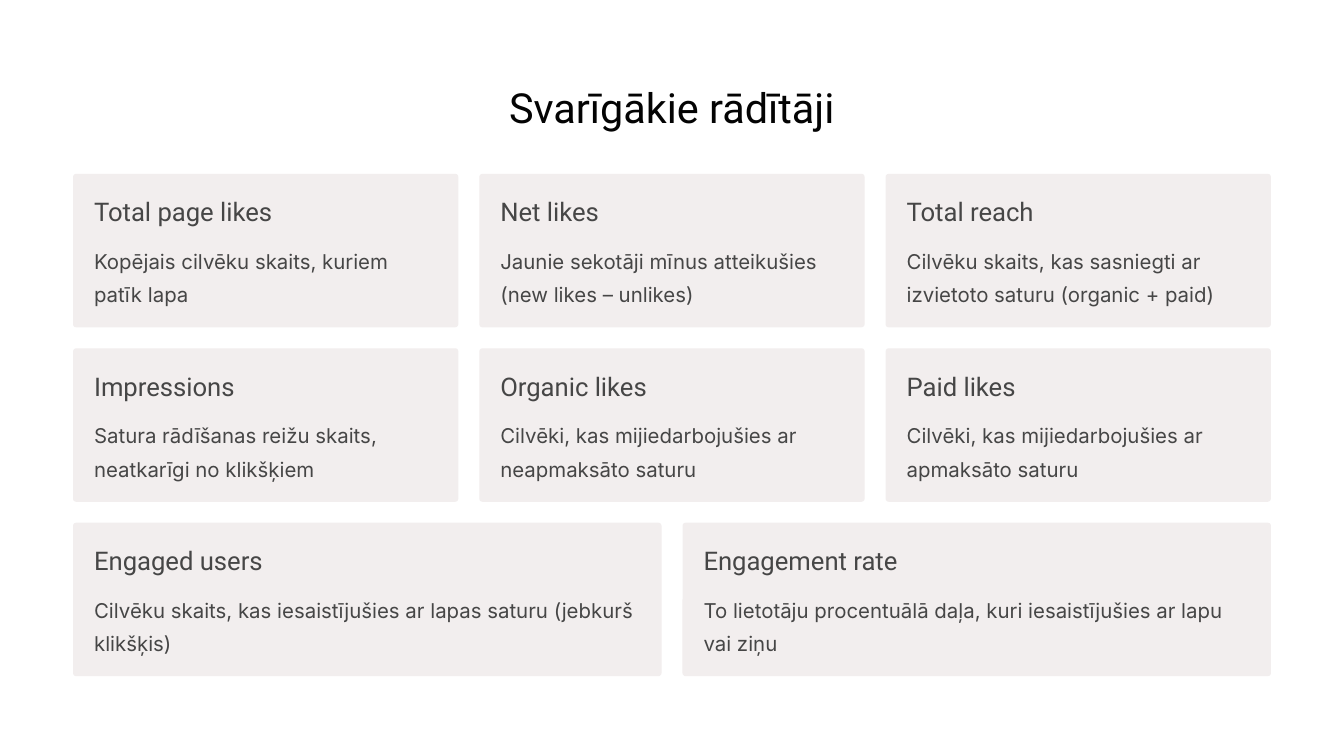
from pptx import Presentation
from pptx.dml.color import RGBColor
from pptx.enum.shapes import MSO_SHAPE
from pptx.enum.text import PP_ALIGN
from pptx.util import Inches, Pt

# Content: one list per row of cards
TITLE = "Svarīgākie rādītāji"
METRIC_ROWS = [
    [
        ("Total page likes", "Kopējais cilvēku skaits, kuriem patīk lapa"),
        ("Net likes", "Jaunie sekotāji mīnus atteikušies (new likes – unlikes)"),
        ("Total reach", "Cilvēku skaits, kas sasniegti ar izvietoto saturu (organic + paid)"),
    ],
    [
        ("Impressions", "Satura rādīšanas reižu skaits, neatkarīgi no klikšķiem"),
        ("Organic likes", "Cilvēki, kas mijiedarbojušies ar neapmaksāto saturu"),
        ("Paid likes", "Cilvēki, kas mijiedarbojušies ar apmaksāto saturu"),
    ],
    [
        ("Engaged users", "Cilvēku skaits, kas iesaistījušies ar lapas saturu (jebkurš klikšķis)"),
        ("Engagement rate", "To lietotāju procentuālā daļa, kuri iesaistījušies ar lapu vai ziņu"),
    ],
]

# Colours
WHITE = RGBColor(0xFF, 0xFF, 0xFF)
TITLE_BLACK = RGBColor(0x03, 0x03, 0x03)
TEXT_GREY = RGBColor(0x46, 0x46, 0x46)
CARD_FILL = RGBColor(0xF2, 0xEE, 0xEE)

# Layout in inches
SLIDE_WIDTH, SLIDE_HEIGHT = 16, 9
MARGIN = 0.87
GRID_TOP, GRID_BOTTOM = 2.07, 8.05
GAP = PADDING = 0.25
HEADING_HEIGHT = 0.39
DESCRIPTION_OFFSET, DESCRIPTION_HEIGHT = 0.79, 0.79


def add_text(slide, text, left, top, width, height, *, font, size, leading,
             color=TEXT_GREY, align=PP_ALIGN.LEFT):
    frame = slide.shapes.add_textbox(
        Inches(left), Inches(top), Inches(width), Inches(height)).text_frame
    frame.margin_left = frame.margin_right = 0
    frame.margin_top = frame.margin_bottom = 0
    frame.word_wrap = True
    paragraph = frame.paragraphs[0]
    paragraph.alignment = align
    paragraph.line_spacing = Pt(leading)
    run = paragraph.add_run()
    run.text = text
    run.font.name = font
    run.font.size = Pt(size)
    run.font.color.rgb = color


def add_card(slide, heading, description, left, top, width, height):
    card = slide.shapes.add_shape(
        MSO_SHAPE.ROUNDED_RECTANGLE,
        Inches(left), Inches(top), Inches(width), Inches(height))
    card.adjustments[0] = 0.02
    card.shadow.inherit = False
    card.fill.solid()
    card.fill.fore_color.rgb = CARD_FILL
    card.line.fill.background()

    text_left, text_width = left + PADDING, width - 2 * PADDING
    add_text(slide, heading, text_left, top + PADDING, text_width,
             HEADING_HEIGHT, font="Roboto", size=22, leading=27.5)
    add_text(slide, description, text_left, top + DESCRIPTION_OFFSET, text_width,
             DESCRIPTION_HEIGHT, font="Inter", size=17.5, leading=28.5)


def split(length, count):
    """Size of each of count equal parts with GAP between them."""
    return (length - (count - 1) * GAP) / count


def main():
    deck = Presentation()
    deck.slide_width, deck.slide_height = Inches(SLIDE_WIDTH), Inches(SLIDE_HEIGHT)
    slide = deck.slides.add_slide(deck.slide_layouts[6])
    slide.background.fill.solid()
    slide.background.fill.fore_color.rgb = WHITE

    # Title
    add_text(slide, TITLE, 5.52, 0.95, 4.96, 0.62, font="Roboto", size=35.5,
             leading=44.5, color=TITLE_BLACK, align=PP_ALIGN.CENTER)

    # Cards fill each row evenly
    height = split(GRID_BOTTOM - GRID_TOP, len(METRIC_ROWS))
    for row, metrics in enumerate(METRIC_ROWS):
        top = GRID_TOP + row * (height + GAP)
        width = split(SLIDE_WIDTH - 2 * MARGIN, len(metrics))
        for column, (heading, description) in enumerate(metrics):
            left = MARGIN + column * (width + GAP)
            add_card(slide, heading, description, left, top, width, height)

    deck.save("out.pptx")


if __name__ == "__main__":
    main()
